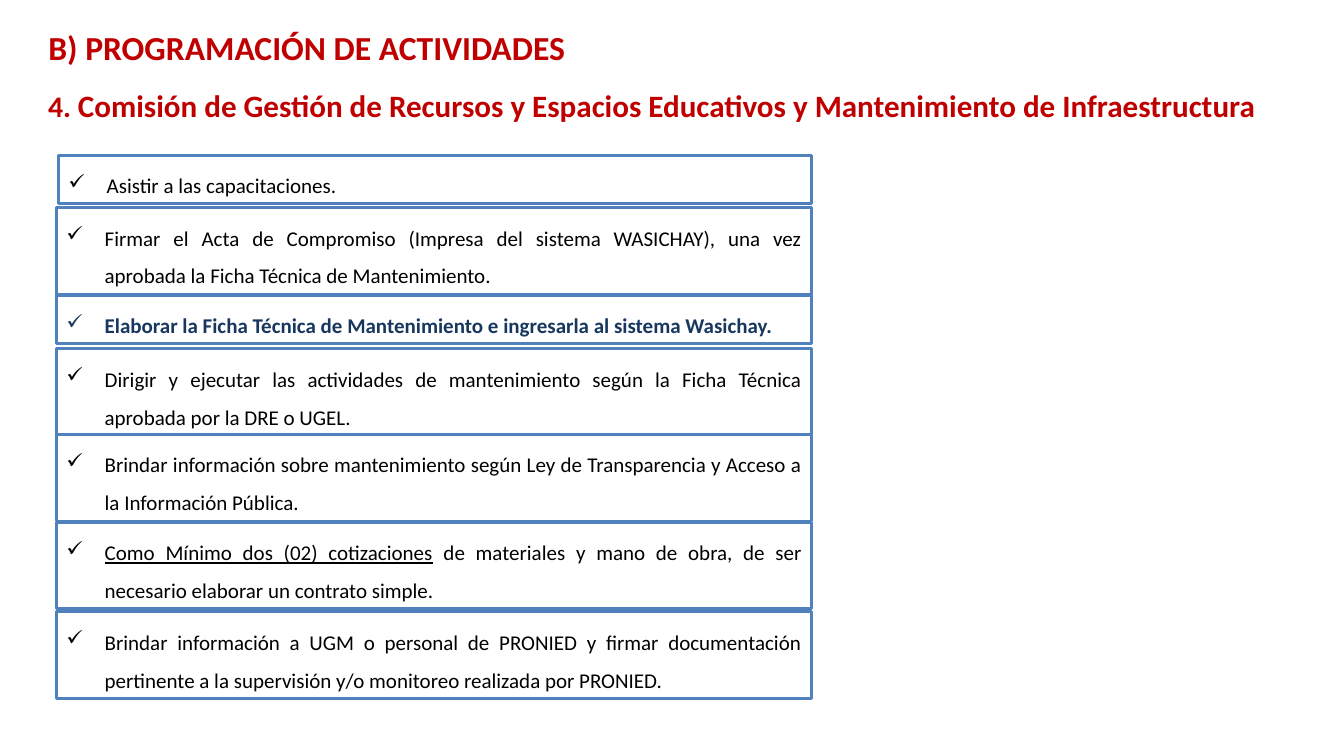
from lxml import etree
from pptx import Presentation
from pptx.dml.color import RGBColor
from pptx.enum.shapes import MSO_SHAPE
from pptx.enum.text import MSO_ANCHOR, MSO_AUTO_SIZE, PP_ALIGN
from pptx.oxml.ns import qn
from pptx.util import Inches, Pt

RECT = MSO_SHAPE.RECTANGLE
TOP, BOTTOM = MSO_ANCHOR.TOP, MSO_ANCHOR.BOTTOM
NO_FIT, GROW = MSO_AUTO_SIZE.NONE, MSO_AUTO_SIZE.SHAPE_TO_FIT_TEXT
LEFT, JUSTIFY = PP_ALIGN.LEFT, PP_ALIGN.JUSTIFY

RED = RGBColor(0xC0, 0x00, 0x00)
BLUE = RGBColor(0x4F, 0x81, 0xBD)
NAVY = RGBColor(0x17, 0x37, 0x5E)
BLACK = RGBColor(0x00, 0x00, 0x00)
WHITE = RGBColor(0xFF, 0xFF, 0xFF)

RIGHT_EDGE = 8.05
ONE_LINE, TWO_LINES = 0.48, 0.86
HEADING = {"bold": True, "color": RED}
KEY_TASK = {"bold": True, "color": NAVY}
UNDERLINED = {"underline": True}

TASKS = [
    (0.58, 1.54, ONE_LINE, [("Asistir a las capacitaciones.", {})]),
    (0.56, 2.06, TWO_LINES, [
        ("Firmar el Acta de Compromiso (Impresa del sistema WASICHAY), una vez "
         "aprobada la Ficha Técnica de Mantenimiento.", {})]),
    (0.56, 2.93, ONE_LINE, [
        ("Elaborar la Ficha Técnica de Mantenimiento e ingresarla al sistema "
         "Wasichay.", KEY_TASK)]),
    (0.56, 3.46, TWO_LINES, [
        ("Dirigir y ejecutar las actividades de mantenimiento según la Ficha "
         "Técnica aprobada por la DRE o UGEL.", {})]),
    (0.56, 4.31, TWO_LINES, [
        ("Brindar información sobre mantenimiento según Ley de Transparencia y "
         "Acceso a la Información Pública.", {})]),
    (0.56, 5.18, TWO_LINES, [
        ("Como Mínimo dos (02) cotizaciones", UNDERLINED),
        (" de materiales y mano de obra, de ser necesario elaborar un contrato "
         "simple.", {})]),
    (0.56, 6.07, TWO_LINES, [
        ("Brindar información a UGM o personal de PRONIED y firmar documentación "
         "pertinente a la supervisión y/o monitoreo realizada por PRONIED.", {})]),
]


def add_run(p, text, size, fmt):
    r = p.add_run()
    r.text = text
    values = {"name": "Calibri", "size": Pt(size), "color": BLACK, **fmt}
    r.font.color.rgb = values.pop("color")
    for name, value in values.items():
        setattr(r.font, name, value)


def format_frame(tf, anchor, auto_size):
    values = {
        "word_wrap": True, "vertical_anchor": anchor, "auto_size": auto_size,
        "margin_left": Inches(0.1), "margin_right": Inches(0.1),
        "margin_top": Inches(0.05), "margin_bottom": Inches(0.05),
    }
    for name, value in values.items():
        setattr(tf, name, value)


def add_check_bullet(p):
    pPr = p._p.get_or_add_pPr()
    pPr.set("marL", str(Inches(0.38)))
    pPr.set("indent", str(-Inches(0.38)))
    etree.SubElement(pPr, qn("a:buChar"), char="✓")


def add_title(s, left, top, width, height, text):
    sp = s.shapes.title
    sp.left, sp.top = Inches(left), Inches(top)
    sp.width, sp.height = Inches(width), Inches(height)
    tf = sp.text_frame
    format_frame(tf, TOP, NO_FIT)
    p = tf.paragraphs[0]
    p.alignment = LEFT
    p.line_spacing = 1.0
    p.space_before = Pt(0)
    add_run(p, text, 24, HEADING)


def add_subtitle(s, left, top, width, height, number, text):
    sp = s.shapes.add_textbox(Inches(left), Inches(top), Inches(width), Inches(height))
    tf = sp.text_frame
    format_frame(tf, BOTTOM, NO_FIT)
    p = tf.paragraphs[0]
    add_run(p, number, 21.3, HEADING)
    add_run(p, text, 22.2, HEADING)


def add_task(s, left, top, height, runs):
    sp = s.shapes.add_shape(RECT, Inches(left), Inches(top),
                            Inches(RIGHT_EDGE - left), Inches(height))
    sp.shadow.inherit = False
    sp.fill.solid()
    sp.fill.fore_color.rgb = WHITE
    sp.line.color.rgb = BLUE
    sp.line.width = Pt(2)
    tf = sp.text_frame
    format_frame(tf, TOP, GROW)
    p = tf.paragraphs[0]
    add_check_bullet(p)
    p.alignment = JUSTIFY
    p.line_spacing = 1.5
    for text, fmt in runs:
        add_run(p, text, 15, fmt)


def main():
    prs = Presentation()
    prs.slide_width, prs.slide_height = Inches(13.33), Inches(7.5)
    s = prs.slides.add_slide(prs.slide_layouts[5])
    add_title(s, 0.38, 0.22, 5.35, 0.56, "B) PROGRAMACIÓN DE ACTIVIDADES")
    add_subtitle(s, 0.38, 0.72, 12.4, 0.56, "4. ",
                 "Comisión de Gestión de Recursos y Espacios Educativos y "
                 "Mantenimiento de Infraestructura")
    for task in TASKS:
        add_task(s, *task)
    prs.save("out.pptx")


if __name__ == "__main__":
    main()
